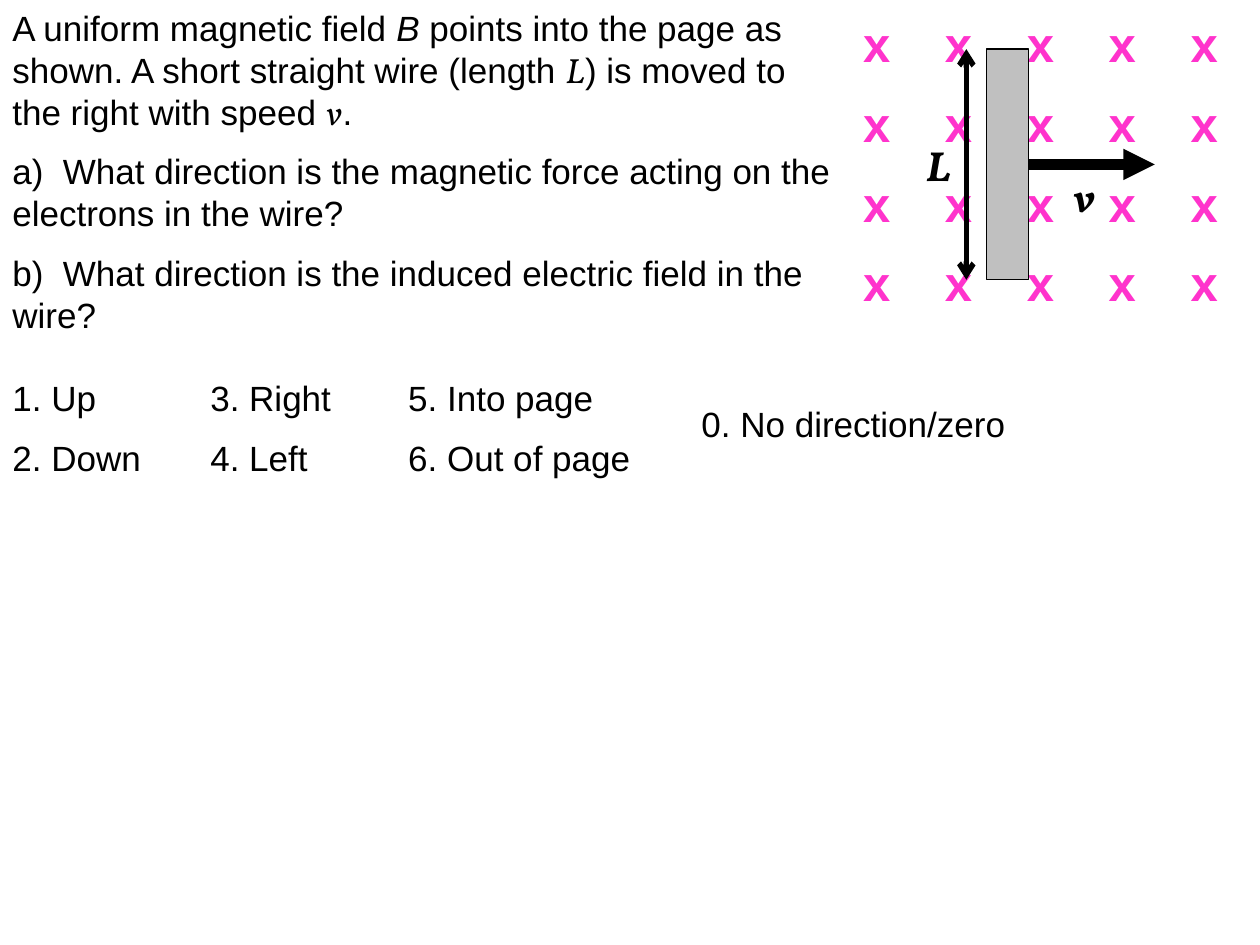
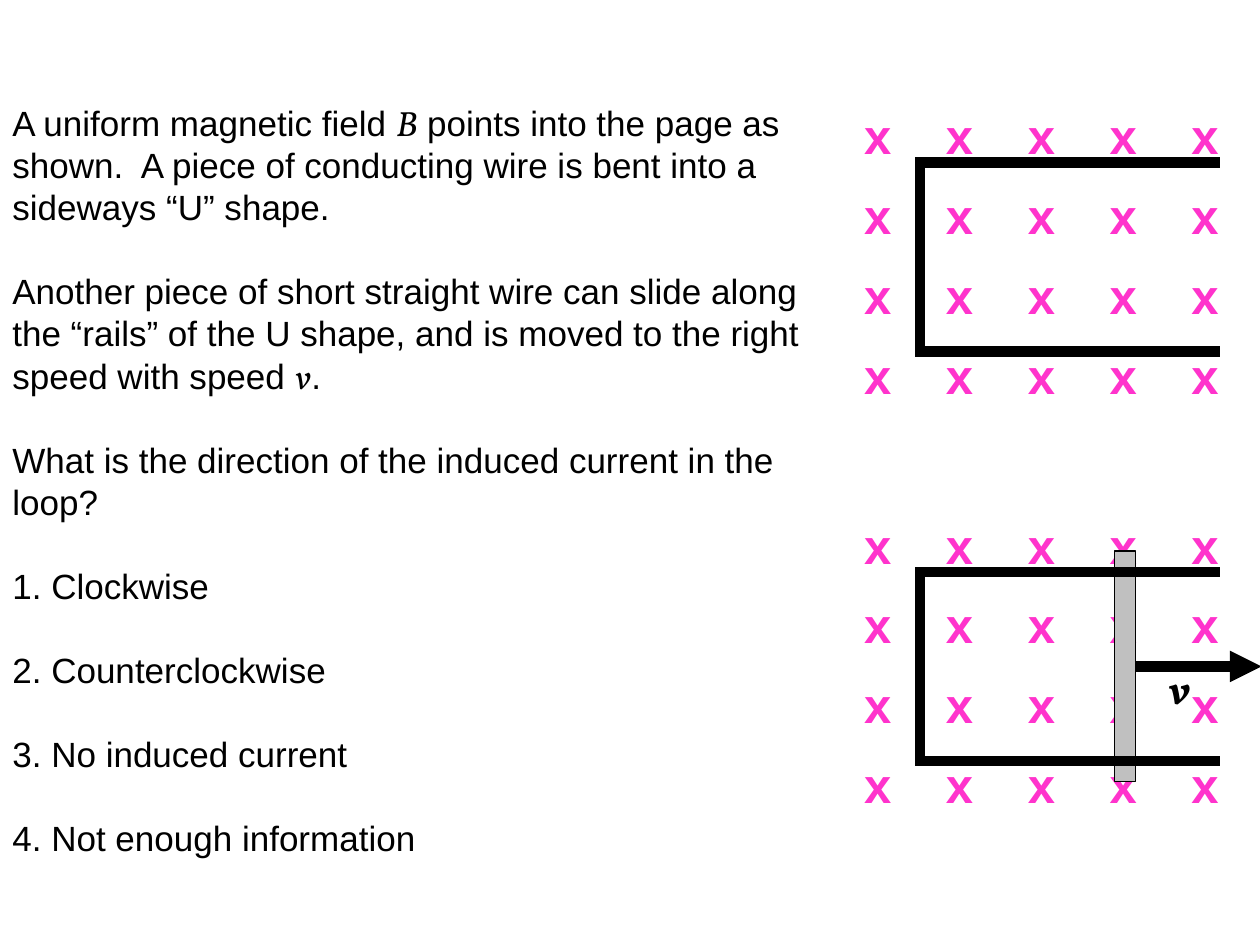
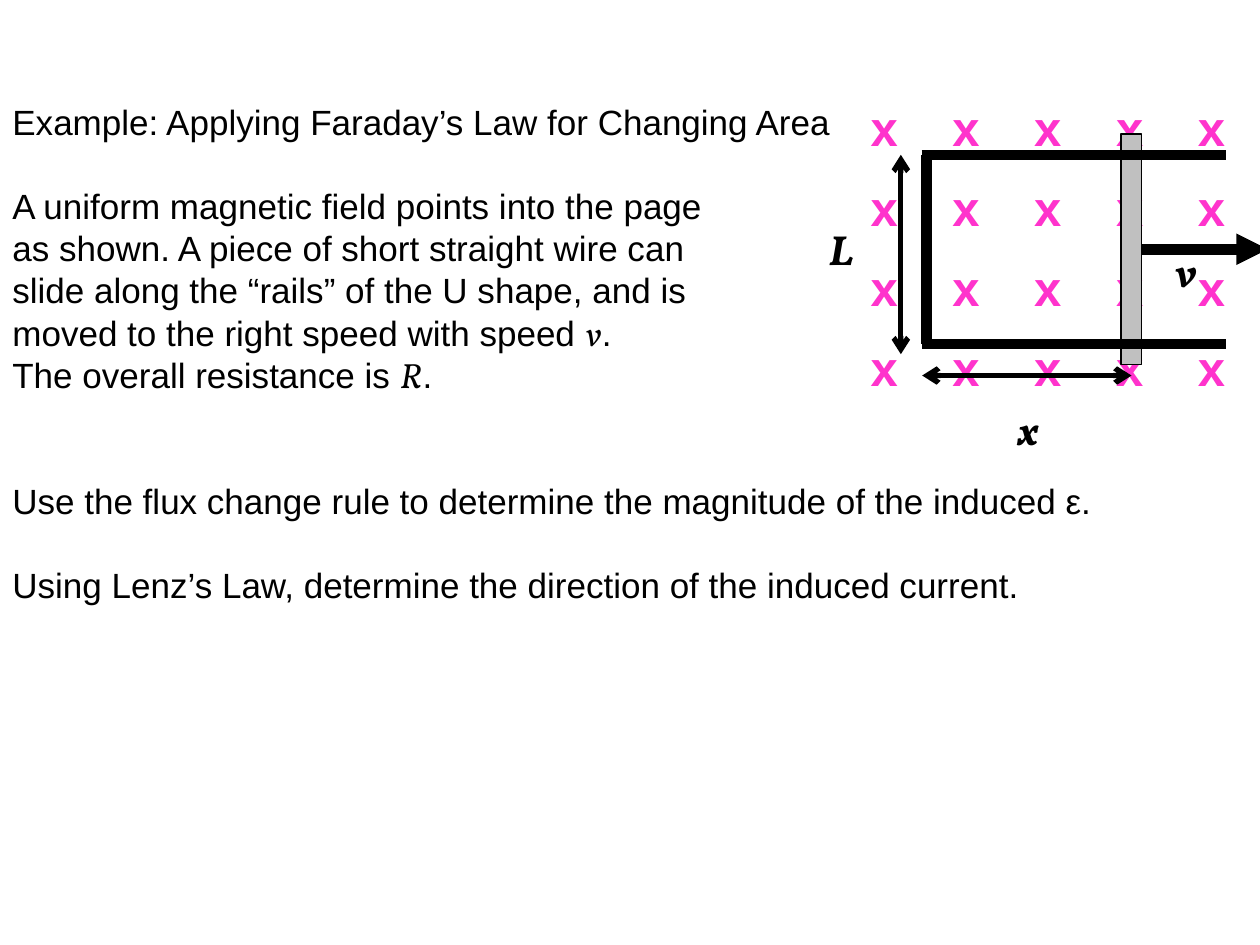
from lxml import etree
from pptx import Presentation
from pptx import util as u
from pptx.dml.color import RGBColor
from pptx.enum import shapes, text
from pptx.oxml.ns import qn

Cm, Pt = u.Cm, u.Pt
SANS, MATH = "Arial", "Vollkorn"
BLACK, WHITE, GREY, PINK = "000000", "FFFFFF", "C0C0C0", "FF33CC"
BODY = dict(name=SANS, size=Pt(20), bold=False, italic=False)
CROSS = dict(name=SANS, size=Pt(28), bold=True)
LABEL = dict(name=MATH, size=Pt(24), bold=True, italic=True)


def rgb(code):
    return RGBColor.from_string(code)


class Deck:
    """Holds the style and the current slide."""

    def __init__(self):
        self.prs = Presentation()
        self.prs.slide_width, self.prs.slide_height = Cm(25.4), Cm(19.05)

    def page(self):
        self.slide = self.prs.slides.add_slide(self.prs.slide_layouts[6])

    def run(self, para, words, style, color=BLACK):
        font = para.add_run()
        font.text = words
        font = font.font
        for key, value in style.items():
            setattr(font, key, value)
        font.color.rgb = rgb(color)

    def box(self, x, y, w, h):
        frame = self.slide.shapes.add_textbox(Cm(x), Cm(y), Cm(w), Cm(h)).text_frame
        frame.word_wrap = True
        return frame

    def body(self, x, y, w, h, paras):
        """Each item is (space before in points, parts); a pair is a symbol and its font."""
        frame = self.box(x, y, w, h)
        for i, (gap, *parts) in enumerate(paras):
            para = frame.add_paragraph() if i else frame.paragraphs[0]
            para.line_spacing, para.space_before = Pt(24), Pt(gap)
            for part in parts:
                if isinstance(part, tuple):
                    self.run(para, part[0], dict(BODY, name=part[1], italic=True))
                else:
                    self.run(para, part, BODY)

    def label(self, x, y, words):
        self.run(self.box(x, y, 1.07, 1.27).paragraphs[0], words, LABEL)

    def rect(self, x, y, w, h, fill, edge=None):
        shape = self.slide.shapes.add_shape(
            shapes.MSO_SHAPE.RECTANGLE, Cm(x), Cm(y), Cm(w), Cm(h))
        shape.shadow.inherit = False
        shape.fill.solid()
        shape.fill.fore_color.rgb = rgb(fill)
        if edge:
            shape.line.color.rgb = rgb(edge)
            shape.line.width = Pt(0.75)
        else:
            shape.line.fill.background()
        return shape

    def line(self, x1, y1, x2, y2, width, head=None, tail=None):
        link = self.slide.shapes.add_connector(
            shapes.MSO_CONNECTOR.STRAIGHT, Cm(x1), Cm(y1), Cm(x2), Cm(y2))
        link.line.color.rgb = rgb(BLACK)
        link.line.width = Pt(width)
        for tag, kind in (("a:headEnd", head), ("a:tailEnd", tail)):
            if kind:
                etree.SubElement(link.line._get_or_add_ln(), qn(tag), type=kind)
        etree.SubElement(link._element.spPr, qn("a:effectLst"))
        return link

    def span(self, x1, y1, x2, y2):
        self.line(x1, y1, x2, y2, 3, "arrow", "arrow")

    # Magnetic field: four rows of five crosses
    def field(self, x, y):
        frame = self.rect(x, y, 8.05, 6.78, WHITE).text_frame
        frame.vertical_anchor = text.MSO_ANCHOR.TOP
        for row in range(4):
            para = frame.add_paragraph() if row else frame.paragraphs[0]
            para.alignment = text.PP_ALIGN.LEFT
            para.line_spacing = Pt(33.6)
            para.space_before = Pt(12 if row else 0)
            tabs = etree.SubElement(para._p.get_or_add_pPr(), qn("a:tabLst"))
            for col in range(1, 5):
                etree.SubElement(tabs, qn("a:tab"), pos=str(Cm(1.65 * col)), algn="l")
            self.run(para, "\t".join("x" * 5), CROSS, PINK)

    # Moving wire with its velocity arrow
    def wire(self, x, y, w, dx, dy):
        h = 4.65
        bar = self.rect(x, y, w, h, GREY, BLACK)
        right, mid = x + w, y + h / 2
        self.line(right, mid, right + 2.54, mid, 6, tail="triangle").begin_connect(bar, 3)
        self.label(right + dx, mid + dy, "v")

    # U-shaped rails, placed within the field at x, y
    def rails(self, x, y):
        left, right, top, low = x + 1.28, x + 7.42, y + 1.27, y + 5.08
        self.line(left, top, right, top, 6)
        self.line(left, low, right, low, 6)
        self.line(left + 0.1, low, left + 0.1, top, 6)

    def slider(self, x, y):
        self.wire(x + 5.3, y + 0.85, 0.42, 0.42, -0.2)


def force(deck):
    deck.page()
    deck.body(0, 0, 17.25, 9.25, [
        (0, "A uniform magnetic field ", ("B", SANS),
         " points into the page as shown. A short straight wire (length ", ("L", MATH),
         ") is moved to the right with speed ", ("v", MATH), "."),
        (10, "a)  What direction is the magnetic force acting on the electrons in the wire?"),
        (10, "b)  What direction is the induced electric field in the wire?")])
    deck.field(17.15, 0.15)
    deck.wire(19.89, 0.99, 0.85, 0.65, 0)
    deck.label(18.42, 2.69, "L")
    deck.span(19.48, 5.64, 19.48, 0.99)
    # Answers
    pairs = [("1. Up", "2. Down"), ("3. Right", "4. Left"), ("5. Into page", "6. Out of page")]
    for i, (top, low) in enumerate(pairs):
        deck.body(3.99 * i, 7.47, 6.65, 2.39, [(0, top), (10, low)])
    deck.body(13.89, 7.98, 6.65, 1.12, [(0, "0. No direction/zero")])


def current(deck):
    deck.page()
    deck.body(0, 1.93, 17.35, 15.65, [
        (0, "A uniform magnetic field ", ("B", MATH), " points into the page as shown.  "
         "A piece of conducting wire is bent into a sideways “U” shape."),
        (24, "Another piece of short straight wire can slide along the “rails” of the "
         "U shape, and is moved to the right speed with speed ", ("v", MATH), "."),
        (24, "What is the direction of the induced current in the loop?"),
        (24, "1. Clockwise"),
        (24, "2. Counterclockwise"),
        (24, "3. No induced current"),
        (24, "4. Not enough information")])
    x, tops = 17.17, (2.01, 10.26)
    for y in tops:
        deck.field(x, y)
    deck.slider(x, tops[1])
    for y in tops:
        deck.rails(x, y)


def area(deck):
    deck.page()
    deck.body(0, 1.91, 25.4, 10.52, [
        (0, "Example: Applying Faraday’s Law for Changing Area"),
        (24, "A uniform magnetic field points into the page"),
        (0, "as shown. A piece of short straight wire can"),
        (0, "slide along the “rails” of the U shape, and is"),
        (0, "moved to the right speed with speed ", ("v", MATH), "."),
        (0, "The overall resistance is ", ("R", MATH), "."),
        (48, "Use the flux change rule to determine the magnitude of the induced ε."),
        (24, "Using Lenz’s Law, determine the direction of the induced current.")])
    x, y = 17.3, 1.85
    deck.field(x, y)
    deck.slider(x, y)
    deck.rails(x, y)
    # Dimensions of the loop
    deck.label(16.46, 4.39, "L")
    deck.span(18.16, 7.14, 18.16, 3.12)
    deck.span(18.59, 7.57, 22.81, 7.57)
    deck.label(20.27, 8, "x")


def main():
    deck = Deck()
    for build in (force, current, area):
        build(deck)
    deck.prs.save("out.pptx")


if __name__ == "__main__":
    main()
